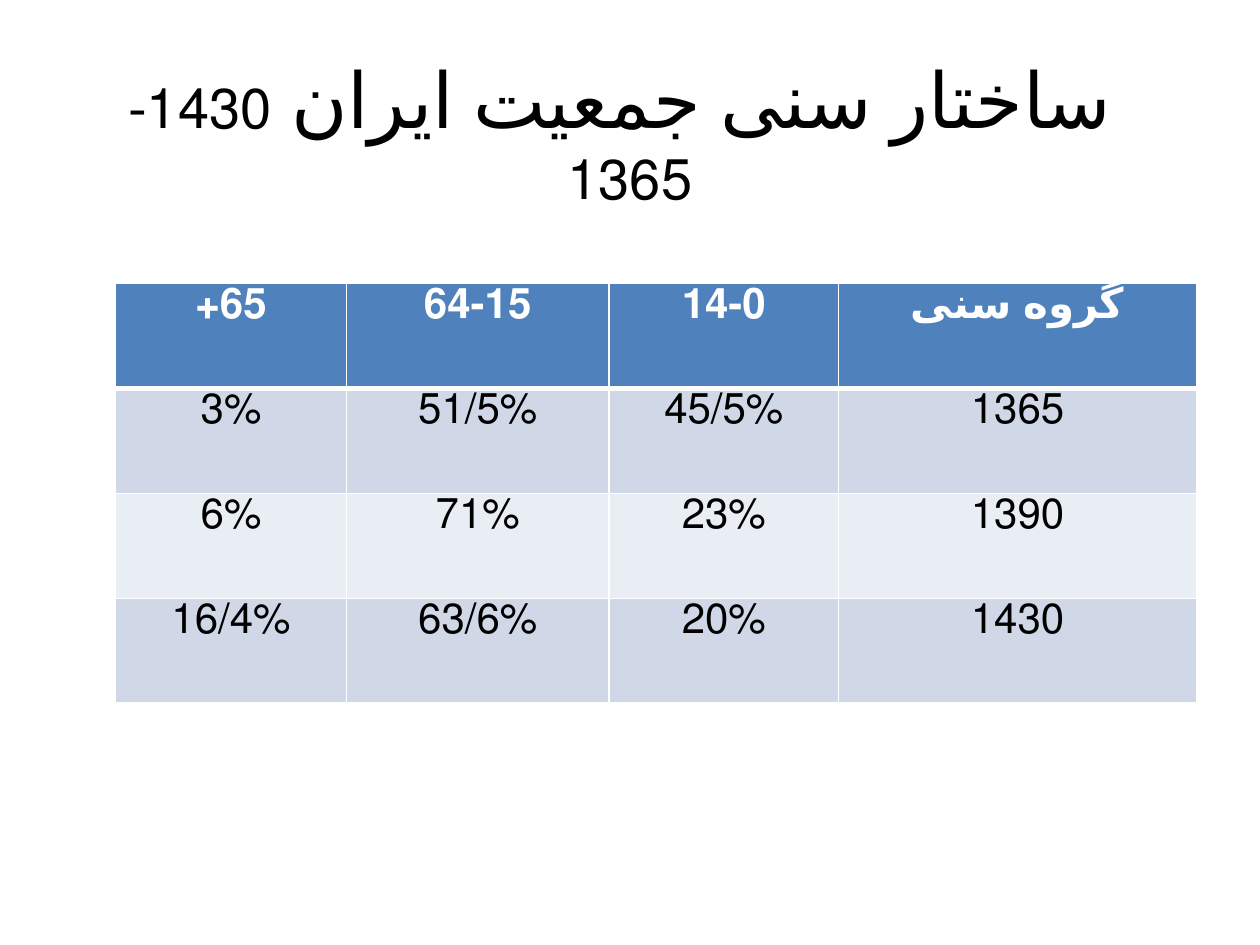
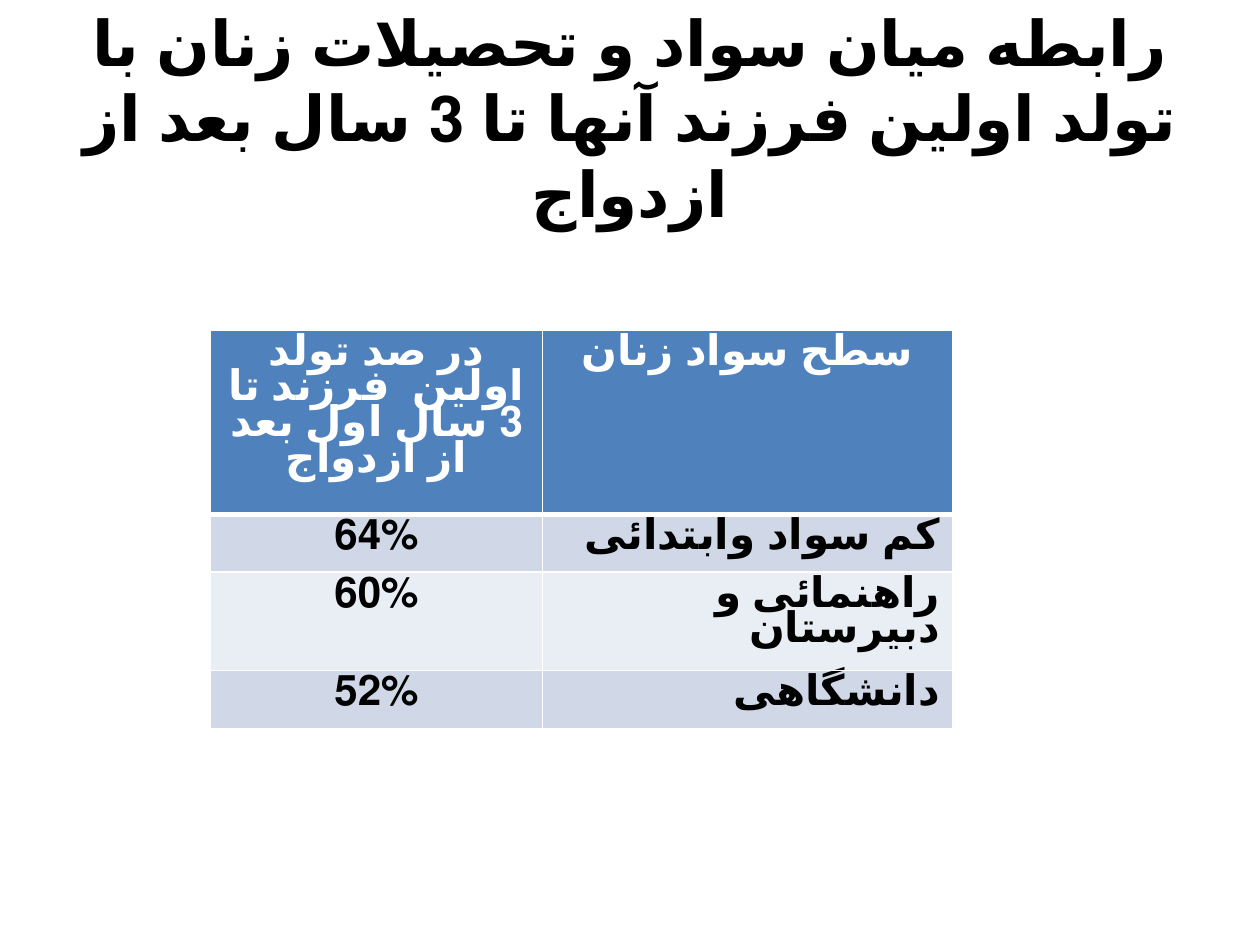
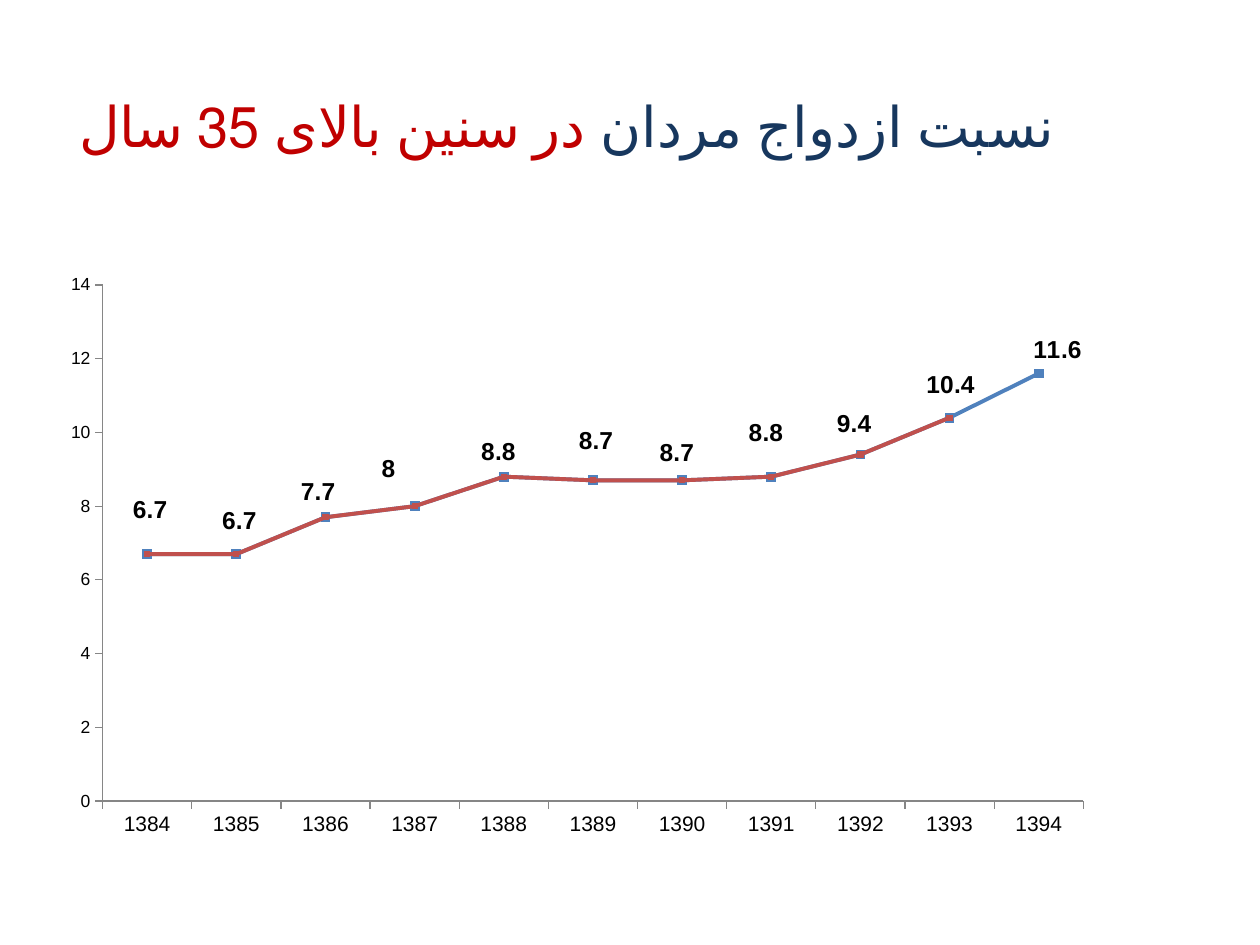
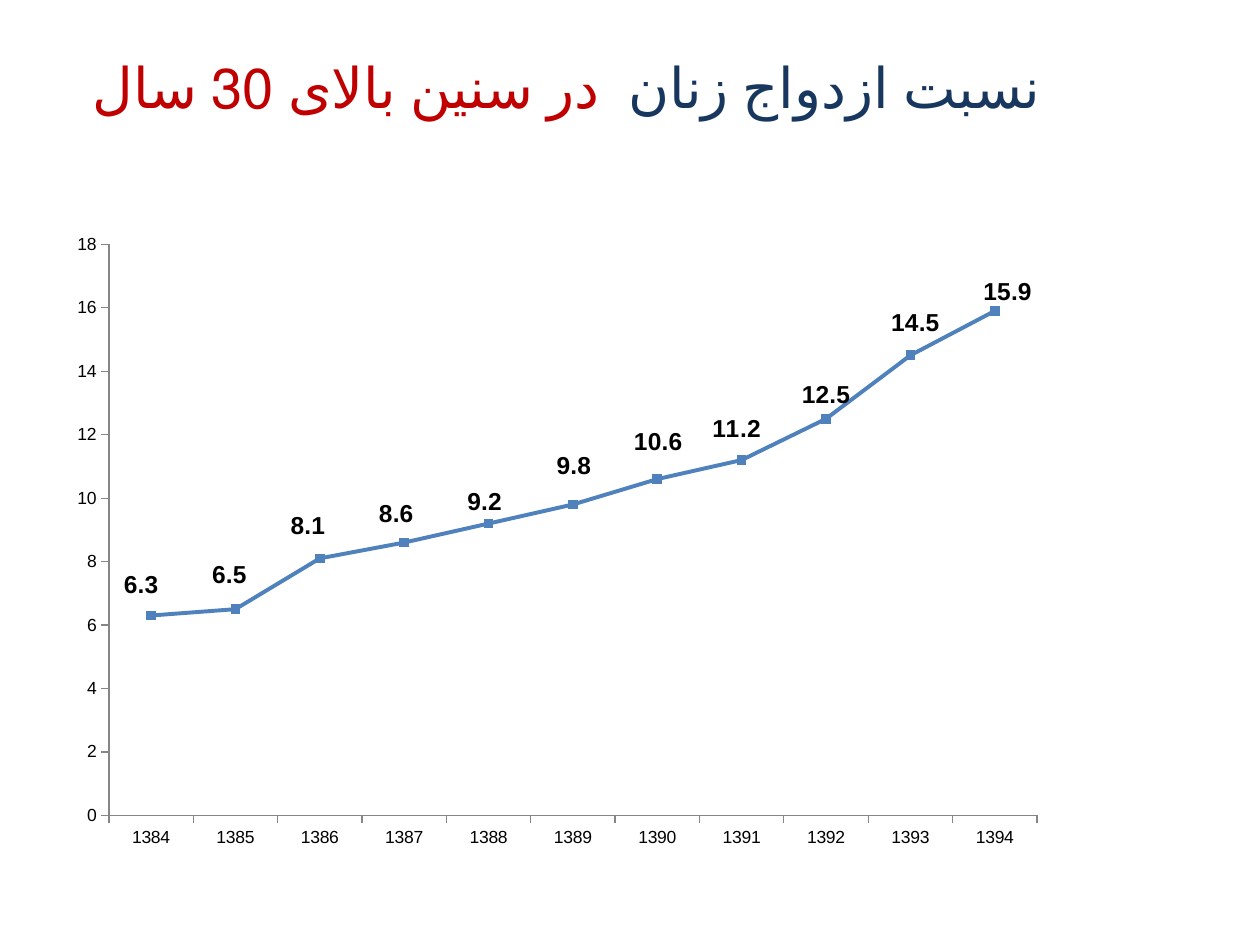
from pptx import Presentation
from pptx.chart.data import CategoryChartData as ChartData
from pptx.dml.color import RGBColor
from pptx.enum.chart import XL_CHART_TYPE as ChartKind
from pptx.enum.chart import XL_LABEL_POSITION as LabelPlace
from pptx.enum.chart import XL_MARKER_STYLE as Marker
from pptx.enum.text import MSO_ANCHOR as Anchor
from pptx.enum.text import PP_ALIGN as Align
from pptx.oxml import parse_xml
from pptx.oxml.ns import nsdecls, qn
from pptx.util import Inches, Pt

# Shared look
BLACK, WHITE, NAVY, RED = "000000", "FFFFFF", "17375E", "C00000"
HEADER, BAND_DARK, BAND_LIGHT = "4F81BD", "D0D8E8", "E9EDF4"
SERIES_COLORS = ["4F81BD", "C0504D"]
MARKER_SIZES = [5, 3]
AXIS_GREY = "868686"
TEXT_FONT, CHART_FONT = "Calibri", "Arial"
TABLE_SPACING = 0.85
YEARS = [str(year) for year in range(1384, 1395)]


def grid(*cells):
    """Turn columns and rows of the 100 x 75 slide grid into lengths."""
    return [Inches(cell / 10) for cell in cells]


def color(value):
    return RGBColor.from_string(value)


def apply_format(target, values):
    for name, value in values.items():
        setattr(target, name, value)


# Right-to-left Persian text
def write_spans(para, spans, align=Align.CENTER, spacing=None):
    """Each span is (text, size, color, bold)."""
    apply_format(para, {"alignment": align, "line_spacing": spacing})
    para._p.get_or_add_pPr().set("rtl", "1")
    for text, size, ink, bold in spans:
        span = para.add_run()
        span.text = text
        apply_format(span.font, {"size": Pt(size), "bold": bold, "name": TEXT_FONT})
        span.font.color.rgb = color(ink)
        span._r.get_or_add_rPr().set("lang", "fa-IR")


def add_title(page, place, spans):
    frame = page.shapes.add_textbox(*grid(*place)).text_frame
    apply_format(frame, {"word_wrap": True, "vertical_anchor": Anchor.MIDDLE})
    write_spans(frame.paragraphs[0], spans)


# Tables
def add_borders(cell, widths):
    """Draw white cell borders; the lines come before the fill."""
    properties = cell._tc.get_or_add_tcPr()
    for index, (side, width) in enumerate(widths.items()):
        properties.insert(index, parse_xml(
            f'<a:ln{side} {nsdecls("a")} w="{Pt(width)}"><a:solidFill>'
            f'<a:srgbClr val="{WHITE}"/></a:solidFill></a:ln{side}>'))


def add_banded_table(page, place, rows, widths, row_height,
                     body_bold=False, last_align=Align.CENTER):
    shape = page.shapes.add_table(len(rows), len(widths), *grid(*place))
    table = shape.table
    for column, width in zip(table.columns, grid(*widths)):
        column.width = width
    for r, texts in enumerate(rows):
        table.rows[r].height = grid(row_height)[0]
        is_header = r == 0
        band = HEADER if is_header else BAND_DARK if r % 2 else BAND_LIGHT
        for c, text in enumerate(texts):
            cell = table.cell(r, c)
            cell.fill.solid()
            cell.fill.fore_color.rgb = color(band)
            add_borders(cell, {"L": 1, "R": 1, "T": 3 if r == 1 else 1,
                               "B": 3 if is_header else 1})
            is_label = not is_header and c == len(texts) - 1
            write_spans(cell.text_frame.paragraphs[0],
                        [(text, 24, WHITE if is_header else BLACK,
                          is_header or body_bold)],
                        last_align if is_label else Align.CENTER, TABLE_SPACING)
    shape.height = grid(place[3])[0]


# Charts
def manual_layout(**values):
    parts = "".join(f'<c:{name} val="{value}"/>' for name, value in values.items())
    return parse_xml(f'<c:layout {nsdecls("c")}><c:manualLayout>{parts}'
                     '</c:manualLayout></c:layout>')


def style_font(font, size, bold=False):
    apply_format(font, {"size": Pt(size), "bold": bold, "name": CHART_FONT})
    font.color.rgb = color(BLACK)


def style_axis(axis, size):
    axis.has_major_gridlines = False
    style_font(axis.tick_labels.font, size)
    axis.format.line.color.rgb = color(AXIS_GREY)


def style_series(series, ink, marker_size):
    series.smooth = False
    series.format.line.width = Pt(2.25)
    series.format.line.color.rgb = color(ink)
    apply_format(series.marker, {"style": Marker.SQUARE, "size": marker_size})
    series.marker.format.fill.solid()
    series.marker.format.fill.fore_color.rgb = color(ink)
    series.marker.format.line.color.rgb = color(ink)


def label_points(chart, series, nudges):
    """Put each value above its point, moved by hundredths of the chart."""
    series.data_labels.show_value = True
    style_font(series.data_labels.font, 14, True)
    for index in range(len(nudges)):
        label = series.points[index].data_label
        style_font(label.font, 14, True)
        label.position = LabelPlace.ABOVE
    for label, (dx, dy) in zip(chart.element.xpath(".//c:dLbl"), nudges):
        label.insert(1, manual_layout(x=dx / 100, y=dy / 100))
    for leader in chart.element.xpath(".//c:showLeaderLines"):
        leader.set("val", "0")


def add_line_chart(page, place, plot, lines, top, category_size, nudges):
    """The plot area is given in hundredths of the chart."""
    data = ChartData()
    data.categories = YEARS
    for number, values in enumerate(lines, 1):
        data.add_series(f"Series {number}", values)
    chart = page.shapes.add_chart(ChartKind.LINE_MARKERS, *grid(*place), data).chart
    apply_format(chart, {"has_title": False, "has_legend": False})
    style_font(chart.font, 10)
    chart.plots[0].vary_by_categories = False
    style_axis(chart.category_axis, category_size)
    style_axis(chart.value_axis, 10)
    apply_format(chart.value_axis, {"minimum_scale": 0, "maximum_scale": top,
                                    "major_unit": 2})
    for series, ink, size in zip(chart.plots[0].series, SERIES_COLORS, MARKER_SIZES):
        style_series(series, ink, size)
    label_points(chart, chart.plots[0].series[0], nudges)

    # Fixed inner plot area
    area = chart.element.xpath(".//c:plotArea")[0]
    for layout in area.findall(qn("c:layout")):
        area.remove(layout)
    x, y, w, h = [share / 100 for share in plot]
    area.insert(0, manual_layout(layoutTarget="inner", xMode="edge", yMode="edge",
                                 x=x, y=y, w=w, h=h))


# Slides
def add_age_structure(page):
    add_title(page, (5, 2.9, 90, 15), [
        (" ساختار سنی جمعیت ایران ", 44, BLACK, False),
        ("1430-1365", 32, BLACK, False)])
    add_banded_table(page, (9.17, 22.5, 85.8, 33.3), [
        ["65+", "64-15", "14-0", "گروه سنی"],
        ["3%", "51/5%", "45/5%", "1365"],
        ["6%", "71%", "23%", "1390"],
        ["16/4%", "63/6%", "20%", "1430"],
    ], widths=(18.33, 20.83, 18.24, 28.4), row_height=8.33)


def add_literacy(page):
    add_title(page, (5, 3, 90, 12.5), [
        ("رابطه میان سواد و تحصیلات زنان با تولد اولین فرزند آنها تا 3 سال بعد از ازدواج",
         36, BLACK, True)])
    add_banded_table(page, (16.7, 26.2, 58.9, 28), [
        ["در صد تولد اولین  فرزند تا 3 سال اول بعد از ازدواج", "سطح سواد زنان"],
        ["64%", "کم سواد وابتدائی "],
        ["60%", "راهنمائی و دبیرستان"],
        ["52%", "دانشگاهی "],
    ], widths=(26.35, 32.55), row_height=4.6,
        body_bold=True, last_align=Align.RIGHT)


def add_men_marriage(page):
    add_title(page, (0, 5.2, 90, 9.4), [
        ("نسبت ازدواج مردان ", 32, NAVY, False),
        ("در سنین بالای 35 سال", 32, RED, False)])
    shares = [6.7, 6.7, 7.7, 8, 8.8, 8.7, 8.7, 8.8, 9.4, 10.4, 11.6]
    add_line_chart(page, (3.5, 20.2, 82.9, 50.4), (5.6, 4.8, 93.9, 81.3),
                   [shares, shares[:-1] + [None]], top=14, category_size=12,
                   nudges=[(0.3, -3.3), (0.3, -1.6), (-0.7, -0.3), (-2.5, -2.3),
                           (-0.5, -0.2), (0.3, -2.5), (-0.5, -0.7), (-0.5, -3.3),
                           (-0.6, -1.2), (0.1, -1.5), (1.8, 0)])


def add_women_marriage(page):
    add_title(page, (0, 2.9, 90, 7.9), [
        ("نسبت ازدواج زنان  ", 32, NAVY, False),
        ("در سنین بالای 30 سال", 32, RED, False)])
    shares = [6.3, 6.5, 8.1, 8.6, 9.2, 9.8, 10.6, 11.2, 12.5, 14.5, 15.9]
    add_line_chart(page, (5.1, 18.6, 78.7, 49.6), (4.5, 1.6, 93.6, 91.4),
                   [shares], top=18, category_size=10,
                   nudges=[(-1, -1.2), (-0.6, -1.8), (-1.2, -1.5), (-0.8, -0.8),
                           (-0.4, 0.2), (0.1, -2.5), (0.1, -2.2), (-0.5, -1.2),
                           (0, -0.2), (0.5, -1.5), (1.3, 0.7)])


def main():
    deck = Presentation()
    deck.slide_width, deck.slide_height = grid(100, 75)
    for build in (add_age_structure, add_literacy, add_men_marriage,
                  add_women_marriage):
        build(deck.slides.add_slide(deck.slide_layouts[6]))
    deck.save("out.pptx")


if __name__ == "__main__":
    main()
